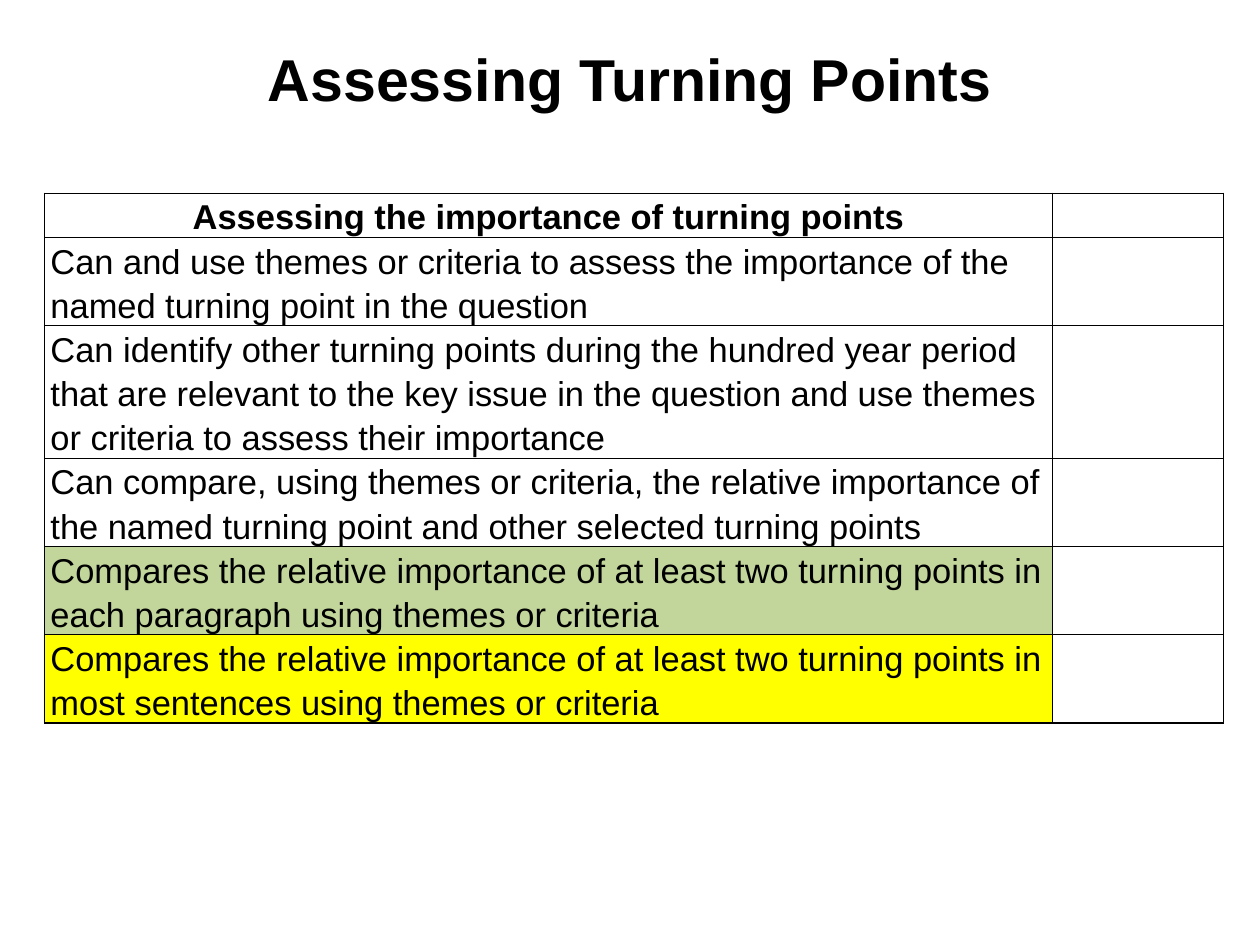
from dataclasses import dataclass

from lxml.etree import SubElement
from pptx import Presentation
from pptx.dml.color import RGBColor
from pptx.enum.text import MSO_ANCHOR as Anchor, PP_ALIGN as Align
from pptx.oxml.ns import qn
from pptx.slide import Slide
from pptx.table import _Cell as Cell
from pptx.text.text import TextFrame
from pptx.util import Inches, Pt

BLACK = RGBColor(0x00, 0x00, 0x00)
WHITE = RGBColor(0xFF, 0xFF, 0xFF)
GREEN = RGBColor(0xC2, 0xD6, 0x9B)
YELLOW = RGBColor(0xFF, 0xFF, 0x00)
FONT = "Arial"

WIDTH, HEIGHT = Inches(14.22), Inches(10.67)
MARGIN = 0.05
COLUMNS = (0.8, 0.136)
LINE_ROW = Inches(0.47)


@dataclass(frozen=True)
class Criterion:
    """One table row: its wording, height in text lines and look."""

    text: str
    lines: int = 2
    fill: RGBColor = WHITE
    heading: bool = False


CRITERIA = (
    Criterion("Assessing the importance of turning points", lines=1, heading=True),
    Criterion("Can and use themes or criteria to assess the importance of the "
              "named turning point in the question"),
    Criterion("Can identify other turning points during the hundred year period "
              "that are relevant to the key issue in the question and use themes "
              "or criteria to assess their importance", lines=3),
    Criterion("Can compare, using themes or criteria, the relative importance of "
              "the named turning point and other selected turning points"),
    Criterion("Compares the relative importance of at least two turning points in "
              "each paragraph using themes or criteria", fill=GREEN),
    Criterion("Compares the relative importance of at least two turning points in "
              "most sentences using themes or criteria", fill=YELLOW),
)


def write(frame: TextFrame, text: str, *, size: float, bold: bool = False,
          align: Align = Align.LEFT, spacing: float = 1.0) -> None:
    """Fill a text frame with one formatted paragraph."""
    para = frame.paragraphs[0]
    para.alignment = align
    para.line_spacing = spacing
    para.space_before = Pt(0)
    span = para.add_run()
    span.text = text
    span.font.name = FONT
    span.font.size = Pt(size)
    span.font.bold = bold
    span.font.color.rgb = BLACK


def style_cell(cell: Cell, fill: RGBColor) -> None:
    """Give a cell thin black borders, a fill and tight margins."""
    properties = cell._tc.get_or_add_tcPr()
    for side in ("a:lnL", "a:lnR", "a:lnT", "a:lnB"):
        border = SubElement(properties, qn(side), w=str(Pt(1)))
        solid = SubElement(border, qn("a:solidFill"))
        SubElement(solid, qn("a:srgbClr"), val=str(BLACK))
    cell.fill.solid()
    cell.fill.fore_color.rgb = fill
    cell.margin_left = cell.margin_right = Inches(0.07)
    cell.margin_top = cell.margin_bottom = 0
    cell.vertical_anchor = Anchor.BOTTOM


def add_title(page: Slide, text: str) -> None:
    """Place the slide title in its placeholder."""
    title = page.shapes.title
    title.left, title.top = int(WIDTH * MARGIN), int(HEIGHT * 0.04)
    title.width, title.height = int(WIDTH * 0.9), int(HEIGHT / 6)
    title.text_frame.vertical_anchor = Anchor.TOP
    title.text_frame.word_wrap = True
    write(title.text_frame, text, size=48, bold=True, align=Align.CENTER)


def add_criteria(page: Slide, criteria: tuple[Criterion, ...]) -> None:
    """Draw the criteria with an empty column for marks."""
    height = LINE_ROW * sum(item.lines for item in criteria)
    table = page.shapes.add_table(
        len(criteria), len(COLUMNS), Inches(0.5), Inches(2.18),
        int(WIDTH * sum(COLUMNS)), height).table
    table.first_row = table.horz_banding = False
    for column, share in zip(table.columns, COLUMNS):
        column.width = int(WIDTH * share)
    for index, (row, item) in enumerate(zip(table.rows, criteria)):
        row.height = LINE_ROW * item.lines
        wording, mark = table.cell(index, 0), table.cell(index, 1)
        style_cell(wording, item.fill)
        style_cell(mark, WHITE)
        write(wording.text_frame, item.text, size=28, bold=item.heading,
              align=Align.CENTER if item.heading else Align.LEFT, spacing=1.15)


def main() -> None:
    """Build and save the deck."""
    deck = Presentation()
    deck.slide_width, deck.slide_height = WIDTH, HEIGHT
    page = deck.slides.add_slide(deck.slide_layouts.get_by_name("Title Only"))
    add_title(page, "Assessing Turning Points")
    add_criteria(page, CRITERIA)
    deck.save("out.pptx")


if __name__ == "__main__":
    main()
